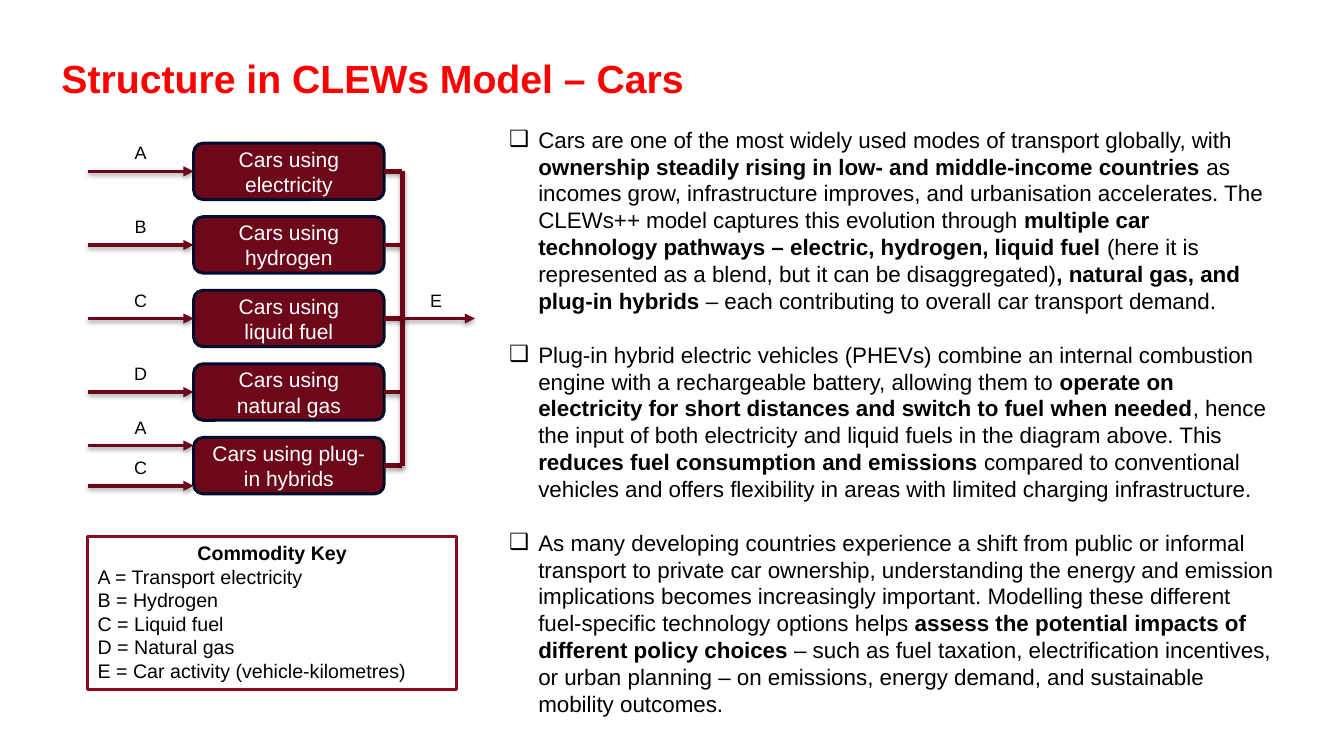
from lxml import etree
from pptx import Presentation
from pptx.dml.color import RGBColor
from pptx.enum.shapes import MSO_CONNECTOR as Connector, MSO_SHAPE as Shape
from pptx.enum.text import MSO_ANCHOR as Anchor, PP_ALIGN as Align
from pptx.oxml.ns import qn
from pptx.util import Pt

PX = 9144  # 100 px to the inch
FONT = "Arial"
RED = RGBColor(0xFF, 0x00, 0x00)
MAROON = RGBColor(0x6C, 0x08, 0x19)
CRIMSON = RGBColor(0x91, 0x0C, 0x22)
NAVY = RGBColor(0x00, 0x0D, 0x2C)
BLACK = RGBColor(0x00, 0x00, 0x00)
WHITE = RGBColor(0xFF, 0xFF, 0xFF)

TITLE = "Structure in CLEWs Model – Cars"

# Box text, then its inputs as (commodity, offset from the box's middle)
CARS = [
    ("Cars using electricity", [("A", 0)]),
    ("Cars using hydrogen", [("B", 0)]),
    ("Cars using\vliquid fuel", [("C", 0)]),
    ("Cars using natural gas", [("D", 0)]),
    ("Cars using plug-in hybrids", [("A", -20), ("C", 20)]),
]

KEY = [
    "A = Transport electricity",
    "B = Hydrogen",
    "C = Liquid fuel",
    "D = Natural gas",
    "E = Car activity (vehicle-kilometres)",
]

# Double asterisks enclose bold words
POINTS = [
    "Cars are one of the most widely used modes of transport globally, with "
    "**ownership steadily rising in low- and middle-income countries** as "
    "incomes grow, infrastructure improves, and urbanisation accelerates. "
    "The CLEWs++ model captures this evolution through **multiple car "
    "technology pathways – electric, hydrogen, liquid fuel **(here it is "
    "represented as a blend, but it can be disaggregated)**, natural gas, and "
    "plug-in hybrids** – each contributing to overall car transport demand.",
    "Plug-in hybrid electric vehicles (PHEVs) combine an internal combustion "
    "engine with a rechargeable battery, allowing them to **operate on "
    "electricity for short distances and switch to fuel when needed**, hence "
    "the input of both electricity and liquid fuels in the diagram above. This "
    "**reduces fuel consumption and emissions** compared to conventional "
    "vehicles and offers flexibility in areas with limited charging "
    "infrastructure.",
    "As many developing countries experience a shift from public or informal "
    "transport to private car ownership, understanding the energy and emission "
    "implications becomes increasingly important. Modelling these different "
    "fuel-specific technology options helps **assess the potential impacts of "
    "different policy choices** – such as fuel taxation, electrification "
    "incentives, or urban planning – on emissions, energy demand, and "
    "sustainable mobility outcomes.",
]


def emu(*lengths):
    return [round(length * PX) for length in lengths]


def add_bullet(para):
    props = para._p.get_or_add_pPr()
    indent, = emu(29)
    props.set("marL", str(indent))
    props.set("indent", str(-indent))
    colour = etree.SubElement(props, qn("a:buClr"))
    etree.SubElement(colour, qn("a:srgbClr"), val=str(BLACK))
    etree.SubElement(props, qn("a:buFont"), typeface=FONT)
    etree.SubElement(props, qn("a:buChar"), char="❑")


def write(shape, paragraphs, size, color=BLACK, align=Align.LEFT, anchor=Anchor.TOP,
          side=10, bold=False, bullets=False, gap=0):
    """Fill a shape with paragraphs, turning ** marks into bold spans."""
    frame = shape.text_frame
    frame.word_wrap = True
    frame.vertical_anchor = anchor
    frame.margin_left, frame.margin_top, frame.margin_right, frame.margin_bottom = emu(
        side, 5, side, 5)
    for index, text in enumerate(paragraphs):
        para = frame.add_paragraph() if index else frame.paragraphs[0]
        if bullets:
            add_bullet(para)
        para.alignment = align
        if index and gap:
            para.space_before = Pt(gap)
        for number, part in enumerate(text.split("**")):
            if not part:
                continue
            lines = part.split("\v")
            for row, line in enumerate(lines):
                if row:
                    para.add_line_break()
                span = para.add_run()
                span.text = line
                span.font.name = FONT
                span.font.size = Pt(size)
                span.font.bold = bold or number % 2 == 1
                span.font.color.rgb = color


def add_text(page, box, paragraphs, size, **style):
    write(page.shapes.add_textbox(*emu(*box)), paragraphs, size, **style)


def add_box(page, kind, box, line, width, fill=None):
    shape = page.shapes.add_shape(kind, *emu(*box))
    shape.shadow.inherit = False
    if fill is None:
        shape.fill.background()
    else:
        shape.fill.solid()
        shape.fill.fore_color.rgb = fill
    shape.line.color.rgb = line
    shape.line.width = Pt(width)
    return shape


def add_line(page, start, end, width=3.21, arrow=False):
    line = page.shapes.add_connector(Connector.STRAIGHT, *emu(*start, *end))
    line.line.color.rgb = MAROON
    line.line.width = Pt(width)
    if arrow:
        etree.SubElement(line.line._get_or_add_ln(), qn("a:tailEnd"), type="triangle")
    # Soft shadow straight below the line
    effects = etree.SubElement(line._element.spPr, qn("a:effectLst"))
    shadow = etree.SubElement(effects, qn("a:outerShdw"), blurRad=str(Pt(3.4)),
                              dist=str(Pt(1.7)), dir="5400000", rotWithShape="0")
    colour = etree.SubElement(shadow, qn("a:srgbClr"), val=str(BLACK))
    etree.SubElement(colour, qn("a:alpha"), val="37000")
    return line


def add_flow(page, letter, start, end, label_left):
    """An arrow with the letter of its commodity above it."""
    arrow = add_line(page, start, end, width=2.41, arrow=True)
    add_text(page, (label_left, start[1] - 34, 77, 32), [letter], 12.8,
             align=Align.CENTER, side=11)
    return arrow


def add_title(page, box):
    title = page.shapes.title
    title.left, title.top, title.width, title.height = emu(*box)
    write(title, [TITLE], 28, color=RED, bold=True, anchor=Anchor.BOTTOM)
    title.text_frame.paragraphs[0].line_spacing = 0.9


def add_diagram(page, box):
    left, top, width, height = box
    car_left, car_width, car_height = left + 105, 189, 56
    car_right, bus = car_left + car_width, left + 312
    pitch = (height - car_height) / (len(CARS) - 1)
    middles = [round(top + car_height / 2 + pitch * row) for row in range(len(CARS))]

    # Car technologies with their inputs and their links to the bus
    for (name, inputs), middle in zip(CARS, middles):
        car = add_box(page, Shape.ROUNDED_RECTANGLE,
                      (car_left, middle - car_height / 2, car_width, car_height),
                      NAVY, 2.14, fill=MAROON)
        write(car, [name], 15, color=WHITE, align=Align.CENTER,
              anchor=Anchor.MIDDLE, side=11)
        for letter, offset in inputs:
            y = middle + offset
            arrow = add_flow(page, letter, (left, y), (car_left, y), left + 14)
            if offset == 0:
                arrow.end_connect(car, 1)
        add_line(page, (bus, middle), (car_right, middle)).end_connect(car, 3)

    # Bus and shared output
    add_line(page, (bus, middles[0]), (bus, middles[-1]))
    centre = middles[len(middles) // 2]
    add_flow(page, "E", (bus, centre), (left + width, centre), left + 307)


def add_key(page, box):
    key = add_box(page, Shape.RECTANGLE, box, CRIMSON, 2.25)
    write(key, ["**Commodity Key**"] + KEY, 14)
    key.text_frame.paragraphs[0].alignment = Align.CENTER


def main():
    deck = Presentation()
    deck.slide_width, deck.slide_height = emu(1333, 750)
    page = deck.slides.add_slide(deck.slide_layouts[5])
    add_title(page, (51, 31, 1270, 75))
    add_text(page, (495, 120, 779, 630), POINTS, 16, bullets=True, gap=19.2)
    add_diagram(page, (87, 142, 384, 348))
    add_key(page, (87, 532, 366, 152))
    deck.save("out.pptx")


if __name__ == "__main__":
    main()
